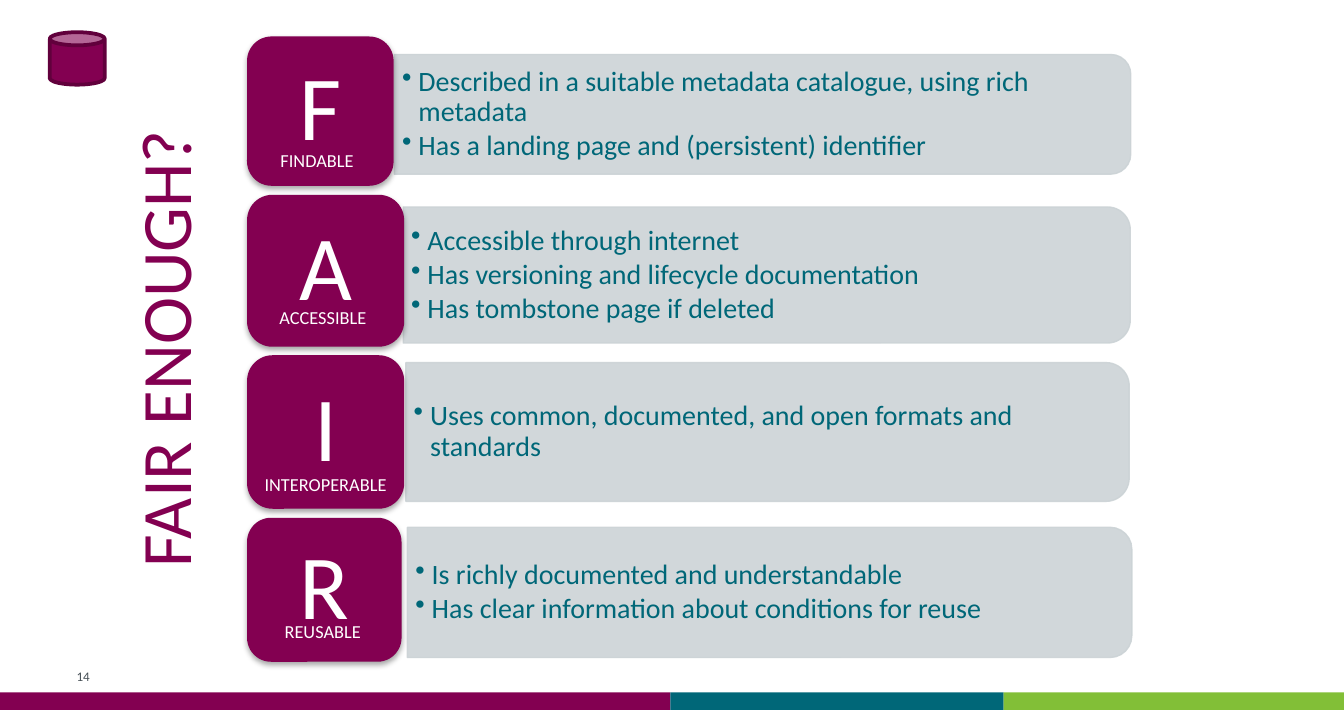
"""Build the FAIR checklist slide."""
from dataclasses import dataclass

import pptx
import pptx.dml.color
import pptx.enum.shapes
import pptx.enum.text
import pptx.oxml
import pptx.oxml.ns
import pptx.util
from pptx.util import Cm

SHAPES = pptx.enum.shapes.MSO_SHAPE
ALIGN = pptx.enum.text.PP_ALIGN
ANCHOR = pptx.enum.text.MSO_ANCHOR


@dataclass(frozen=True)
class Theme:
    font: str = "Calibri"
    plum: str = "830051"
    dark_plum: str = "61003C"
    teal: str = "006778"
    green: str = "82BF37"
    panel: str = "CCD3D6"
    gray: str = "464F55"
    white: str = "FFFFFF"
    title_size: float = 38
    letter_size: float = 49
    bullet_size: float = 15
    label_size: float = 9.8
    number_size: float = 7


THEME = Theme()

# Panel and tile are (left, top, width, height) in cm; label is (left, top, width).
PRINCIPLES = [
    ("F", "FINDABLE", (7.45, 1.03, 13.92, 2.26), (4.67, 0.69, 2.77, 2.82), (5.05, 2.69, 2.03),
     ["Described in a suitable metadata catalogue, using rich metadata",
      "Has a landing page and (persistent) identifier"]),
    ("A", "ACCESSIBLE", (7.62, 3.91, 13.74, 2.57), (4.67, 3.68, 2.97, 2.87), (5.03, 5.66, 2.31),
     ["Accessible through internet",
      "Has versioning and lifecycle documentation",
      "Has tombstone page if deleted"]),
    ("I", "INTEROPERABLE", (7.67, 6.85, 13.67, 2.62), (4.67, 6.71, 2.97, 2.9), (4.75, 8.81, 3.05),
     ["Uses common, documented, and open formats and standards"]),
    ("R", "REUSABLE", (7.7, 9.96, 13.69, 2.46), (4.67, 9.78, 2.92, 2.72), (5.13, 11.58, 2.11),
     ["Is richly documented and understandable",
      "Has clear information about conditions for reuse"]),
]


def rgb(value):
    return pptx.dml.color.RGBColor.from_string(value)


def add_shape(page, kind, area, fill, line=None, width=0.75):
    shape = page.shapes.add_shape(kind, *map(Cm, area))
    shape.shadow.inherit = False
    shape.fill.solid()
    shape.fill.fore_color.rgb = rgb(fill)
    if line:
        shape.line.color.rgb = rgb(line)
        shape.line.width = pptx.util.Pt(width)
    else:
        shape.line.fill.background()
    return shape


def write(shape, lines, size, color, align=ALIGN.LEFT, anchor=ANCHOR.TOP,
          insets=(0.25, 0.13), wrap=True):
    frame = shape.text_frame
    frame.text = "\n".join(lines)
    frame.word_wrap = wrap
    frame.vertical_anchor = anchor
    frame.margin_left = frame.margin_right = Cm(insets[0])
    frame.margin_top = frame.margin_bottom = Cm(insets[1])
    for para in frame.paragraphs:
        para.alignment = align
        for span in para.runs:
            span.font.name = THEME.font
            span.font.size = pptx.util.Pt(size)
            span.font.color.rgb = rgb(color)
    return frame


def add_text(page, area, lines, size, color, **layout):
    box = page.shapes.add_textbox(*map(Cm, area))
    write(box, lines, size, color, **layout)
    return box


def add_bullets(page, area, lines):
    box = add_text(page, area, lines, THEME.bullet_size, THEME.teal,
                   anchor=ANCHOR.MIDDLE, insets=(0.15, 0.08))
    for para in box.text_frame.paragraphs:
        para.line_spacing = 0.9
        para.space_after = pptx.util.Pt(2)
        properties = para._p.get_or_add_pPr()
        properties.set("marL", str(Cm(0.31)))
        properties.set("indent", str(-Cm(0.31)))
        bullet = pptx.oxml.ns.qn("a:buChar")
        properties.makeelement(bullet)
        properties.append(properties.makeelement(bullet, {"char": "•"}))


def add_panel(page, area):
    left, top, width, height = area
    upright = (left + (width - height) / 2, top + (height - width) / 2, height, width)
    panel = add_shape(page, SHAPES.ROUND_2_SAME_RECTANGLE, upright, THEME.panel, THEME.panel)
    panel.rotation = 90
    for color in panel._element.spPr.iter(pptx.oxml.ns.qn("a:srgbClr")):
        color.append(color.makeelement(pptx.oxml.ns.qn("a:alpha"), {"val": "90000"}))


def add_tile(page, area, letter):
    tile = add_shape(page, SHAPES.ROUNDED_RECTANGLE, area, THEME.plum)
    effects = tile._element.spPr.find(pptx.oxml.ns.qn("a:effectLst"))
    effects.append(pptx.oxml.parse_xml(
        f'<a:outerShdw {pptx.oxml.ns.nsdecls("a")} blurRad="39400" dist="22900" '
        'dir="5400000" rotWithShape="0"><a:srgbClr val="000000">'
        '<a:alpha val="35000"/></a:srgbClr></a:outerShdw>'))
    frame = write(tile, [letter], THEME.letter_size, THEME.white,
                  align=ALIGN.CENTER, anchor=ANCHOR.MIDDLE, insets=(0.5, 0.25))
    frame.paragraphs[0].line_spacing = 0.9


def add_footer(page):
    bands = [(0, 12.67, THEME.plum), (12.67, 6.3, THEME.teal), (18.97, 6.43, THEME.green)]
    for left, width, color in bands:
        add_shape(page, SHAPES.RECTANGLE, (left, 13.08, width, 0.33), color)
    add_text(page, (1.27, 12.47, 1.8, 0.61), ["14"], THEME.number_size, THEME.gray,
             anchor=ANCHOR.MIDDLE, insets=(0.18, 0.1))


def main():
    deck = pptx.Presentation()
    deck.slide_width, deck.slide_height = Cm(25.4), Cm(13.41)
    page = deck.slides.add_slide(deck.slide_layouts[6])
    add_footer(page)
    for letter, _, panel, tile, _, lines in PRINCIPLES:
        left, top, width, height = panel
        add_panel(page, panel)
        add_bullets(page, (left, top + 0.11, width - 0.11, height - 0.22), lines)
        add_tile(page, tile, letter)
    title = add_text(page, (-1.42, 5.69, 8.99, 1.8), ["FAIR ENOUGH?"], THEME.title_size,
                     THEME.plum, align=ALIGN.CENTER, insets=(0.18, 0.1), wrap=False)
    title.rotation = 270
    for _, name, _, _, (left, top, width), _ in PRINCIPLES:
        add_text(page, (left, top, width, 0.69), [name], THEME.label_size, THEME.white,
                 wrap=False)
    add_shape(page, SHAPES.CAN, (0.94, 0.61, 1.04, 0.99), THEME.plum, THEME.dark_plum, 2)
    deck.save("out.pptx")


if __name__ == "__main__":
    main()
